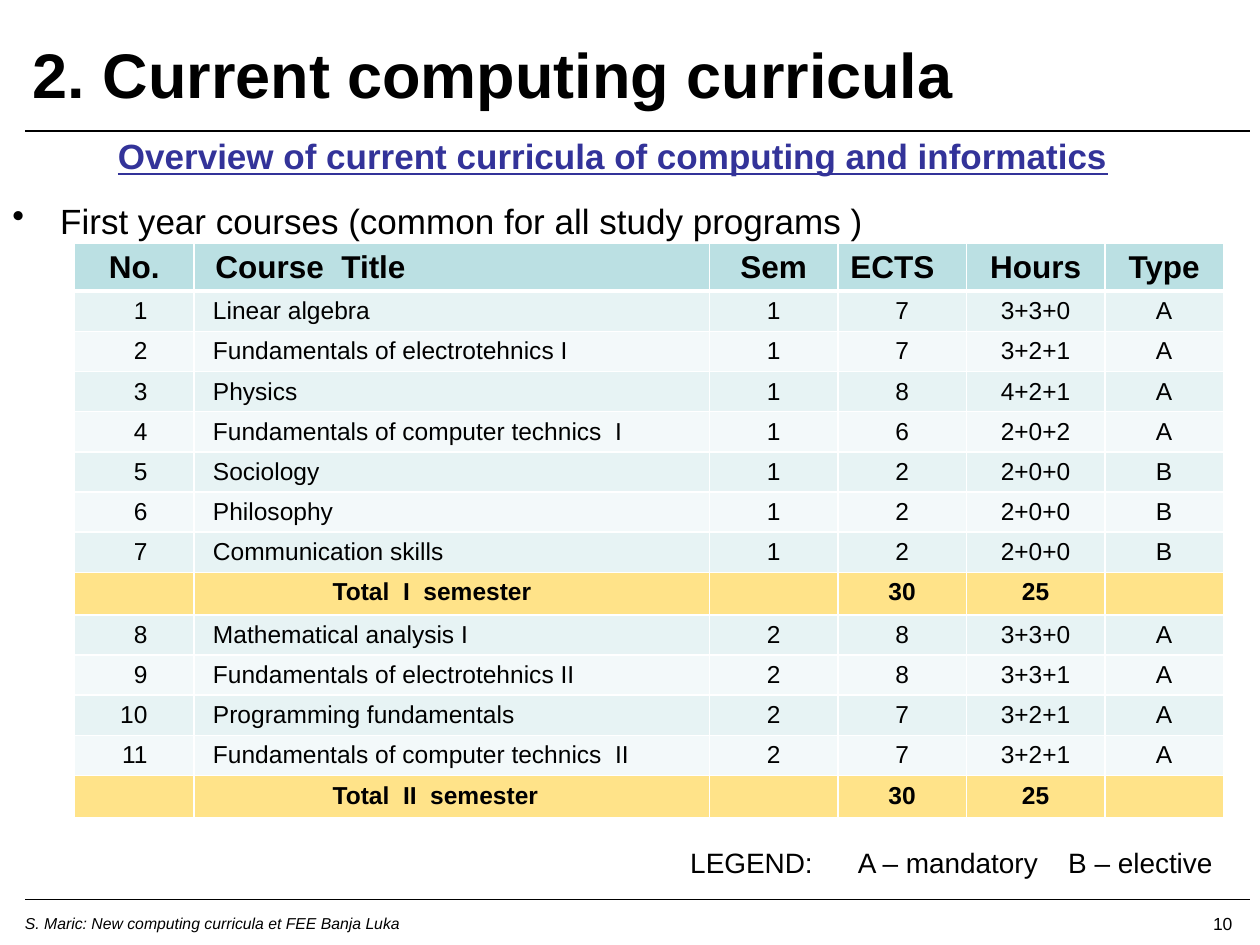
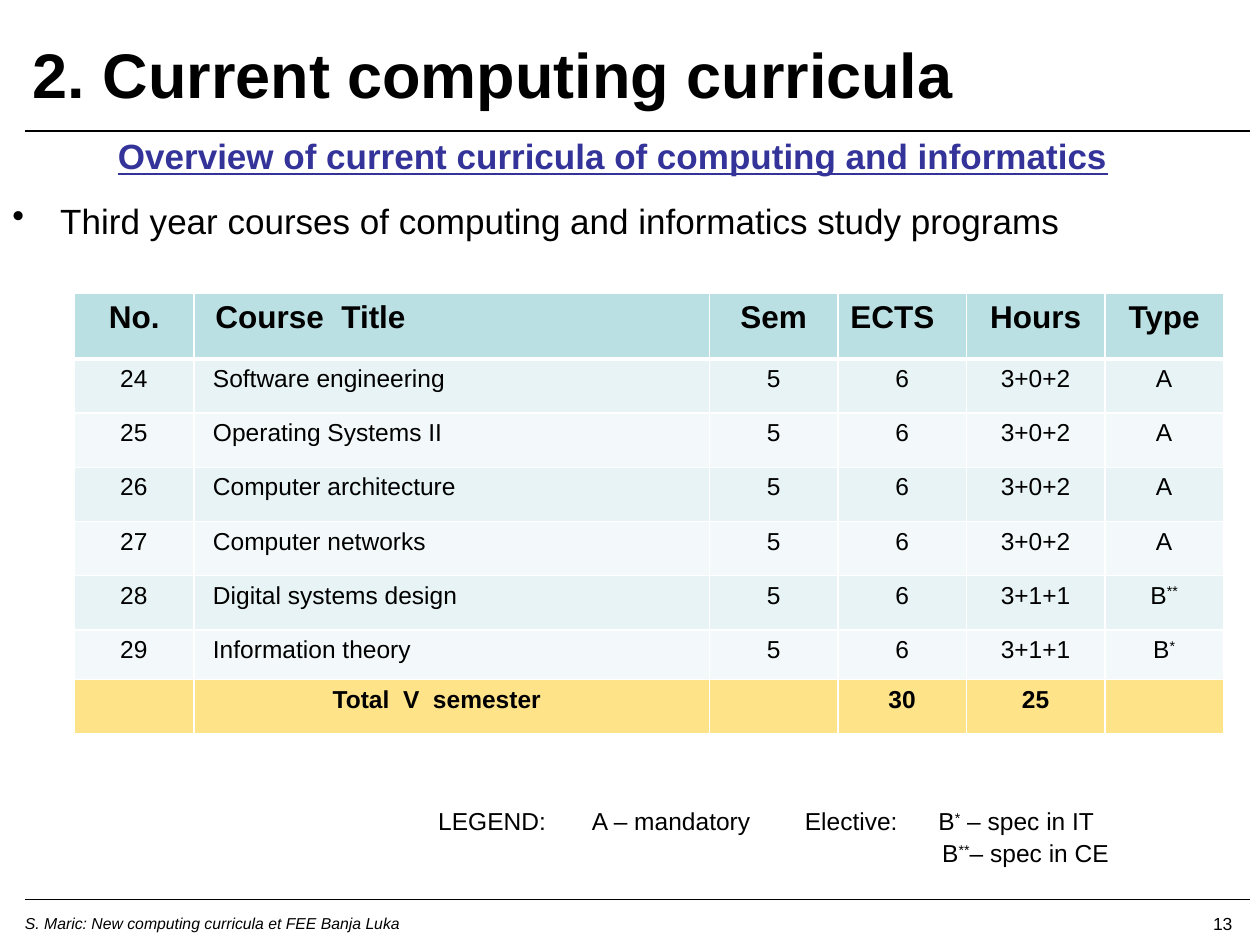
from dataclasses import dataclass
from itertools import groupby
from typing import NamedTuple

from pptx import Presentation
from pptx.dml.color import RGBColor
from pptx.enum.shapes import MSO_CONNECTOR
from pptx.enum.text import MSO_ANCHOR, MSO_AUTO_SIZE, PP_ALIGN
from pptx.oxml.xmlchemy import OxmlElement
from pptx.util import Inches, Pt

LEFT, CENTER, RIGHT = PP_ALIGN.LEFT, PP_ALIGN.CENTER, PP_ALIGN.RIGHT
TOP, BOTTOM = MSO_ANCHOR.TOP, MSO_ANCHOR.BOTTOM
STRAIGHT = MSO_CONNECTOR.STRAIGHT
NO_RESIZE = MSO_AUTO_SIZE.NONE
TITLE_ONLY = 5

# The page is a grid of 100 columns by 75 rows
PAGE_WIDTH, PAGE_HEIGHT = Inches(10), Inches(7.5)


def columns(count: float) -> int:
    return round(PAGE_WIDTH * count / 100)


def rows(count: float) -> int:
    return round(PAGE_HEIGHT * count / 75)


@dataclass(frozen=True)
class Theme:
    font: str = "Arial"
    ink: str = "000000"
    accent: str = "333399"
    border: str = "FFFFFF"
    header_fill: str = "BBE0E3"
    band_fills: tuple = ("E7F3F4", "F3F9FA")
    total_fill: str = "FFE389"
    title_size: float = 36
    body_size: float = 20
    header_size: float = 18
    cell_size: float = 14
    number_size: float = 10
    footer_size: float = 9


class Place(NamedTuple):
    left: float
    top: float
    width: float
    height: float

    def lengths(self) -> tuple:
        return (columns(self.left), rows(self.top),
                columns(self.width), rows(self.height))


class Column(NamedTuple):
    heading: str
    width: float
    heading_align: PP_ALIGN = CENTER
    align: PP_ALIGN = CENTER


class Legend(NamedTuple):
    place: Place
    size: float
    tabs: tuple
    lines: tuple


class CoursePage(NamedTuple):
    number: str
    topic: str
    table_top: float
    row_heights: tuple
    courses: tuple
    legend: Legend


THEME = Theme()
TITLE = "2. Current computing curricula"
SUBTITLE = "Overview of current curricula of computing and informatics"
FOOTER = "S. Maric: New computing curricula et FEE Banja Luka"

TITLE_PLACE = Place(1.6, 1.3, 78.4, 8)
BODY_PLACE = Place(0, 10.2, 97.3, 9)
FOOTER_PLACE = Place(1, 72, 71.7, 2.5)
NUMBER_PLACE = Place(81.5, 72, 17.3, 2.4)
RULE_LEFT, RULE_RIGHT, RULE_TOPS = 2, 99.2, (10.4, 71.4)

TABLE_LEFT = 5.9
TABLE_COLUMNS = (
    Column("No.", 9.5, align=RIGHT),
    Column("Course  Title", 40.9, LEFT, LEFT),
    Column("Sem", 10.2),
    Column("ECTS", 10.2, LEFT),
    Column("Hours", 11),
    Column("Type", 9.4),
)
NUMBER_MARGIN, COURSE_MARGIN, HEADING_MARGIN, TOTAL_MARGIN = 3.7, 1.5, 1.7, 11

PAGES = (
    CoursePage(
        "10", "First year courses (common for all study programs )",
        19.3, (3.7,) + (3.19,) * 13,
        (
            ("1", "Linear algebra", "1", "7", "3+3+0", "A"),
            ("2", "Fundamentals of electrotehnics I", "1", "7", "3+2+1", "A"),
            ("3", "Physics", "1", "8", "4+2+1", "A"),
            ("4", "Fundamentals of computer technics  I", "1", "6", "2+0+2", "A"),
            ("5", "Sociology", "1", "2", "2+0+0", "B"),
            ("6", "Philosophy", "1", "2", "2+0+0", "B"),
            ("7", "Communication skills", "1", "2", "2+0+0", "B"),
            ("", "Total  I  semester", "", "30", "25", ""),
            ("8", "Mathematical analysis I", "2", "8", "3+3+0", "A"),
            ("9", "Fundamentals of electrotehnics II", "2", "8", "3+3+1", "A"),
            ("10", "Programming fundamentals", "2", "7", "3+2+1", "A"),
            ("11", "Fundamentals of computer technics  II", "2", "7", "3+2+1", "A"),
            ("", "Total  II  semester", "", "30", "25", ""),
        ),
        Legend(Place(53.8, 66.6, 45, 3.6), 16, (13.3, 30),
               ("LEGEND:\tA – mandatory\tB – elective",)),
    ),
    CoursePage(
        "13", "Third year courses of computing and informatics study programs",
        23.3, (5.2,) + (4.3,) * 5 + (3.95, 4.3),
        (
            ("24", "Software engineering", "5", "6", "3+0+2", "A"),
            ("25", "Operating Systems II", "5", "6", "3+0+2", "A"),
            ("26", "Computer architecture", "5", "6", "3+0+2", "A"),
            ("27", "Computer networks", "5", "6", "3+0+2", "A"),
            ("28", "Digital systems design", "5", "6", "3+1+1", "B**"),
            ("29", "Information theory", "5", "6", "3+1+1", "B*"),
            ("", "Total  V  semester", "", "30", "25", ""),
        ),
        Legend(Place(33.8, 63.5, 62, 5.8), 14, (12.2, 29.1, 39.7, 40),
               ("LEGEND:\tA – mandatory\tElective:\tB* – spec in IT",
                "\t\t\t\tB**– spec in CE")),
    ),
)


# Text
def write(para, text: str, size: float, color: str = THEME.ink, **extra) -> None:
    """Fill a paragraph, raising every group of asterisks."""
    for raised, letters in groupby(text, lambda letter: letter == "*"):
        span = para.add_run()
        span.text = "".join(letters)
        font_values = {"name": THEME.font, "size": Pt(size), "bold": False, **extra}
        for name, value in font_values.items():
            setattr(span.font, name, value)
        span.font.color.rgb = RGBColor.from_string(color)
        if raised:
            span.font._element.set("baseline", "30000")
    if not text:
        end = OxmlElement("a:endParaRPr")
        end.set("sz", str(size * 100))
        para._p.append(end)


def set_frame(frame, anchor: MSO_ANCHOR = TOP) -> None:
    frame_values = {"word_wrap": True, "auto_size": NO_RESIZE, "vertical_anchor": anchor}
    for name, value in frame_values.items():
        setattr(frame, name, value)


def add_text_box(page, place: Place):
    frame = page.shapes.add_textbox(*place.lengths()).text_frame
    set_frame(frame)
    return frame


def add_bullet(para, indent: float) -> None:
    properties = para._p.get_or_add_pPr()
    properties.set("marL", str(columns(indent)))
    properties.set("indent", str(-columns(indent)))
    bullet = OxmlElement("a:buChar")
    bullet.set("char", "•")
    properties.append(bullet)


def add_tabs(para, stops: tuple) -> None:
    tab_list = OxmlElement("a:tabLst")
    for stop in stops:
        tab = OxmlElement("a:tab")
        tab.set("pos", str(columns(stop)))
        tab.set("algn", "l")
        tab_list.append(tab)
    para._p.get_or_add_pPr().append(tab_list)


# Parts shared by the pages
def add_rule(page, top: float) -> None:
    rule = page.shapes.add_connector(
        STRAIGHT, columns(RULE_LEFT), rows(top), columns(RULE_RIGHT), rows(top))
    rule.line.width = Pt(0.75)
    rule.line.color.rgb = RGBColor.from_string(THEME.ink)
    rule._element.spPr.append(OxmlElement("a:effectLst"))


def add_frame_parts(page, number: str) -> None:
    for top in RULE_TOPS:
        add_rule(page, top)
    title = page.shapes.title
    title.left, title.top, title.width, title.height = TITLE_PLACE.lengths()
    set_frame(title.text_frame, BOTTOM)
    title_para = title.text_frame.paragraphs[0]
    title_para.alignment = LEFT
    write(title_para, TITLE, THEME.title_size, bold=True)
    footer = add_text_box(page, FOOTER_PLACE).paragraphs[0]
    write(footer, FOOTER, THEME.footer_size, italic=True)
    number_para = add_text_box(page, NUMBER_PLACE).paragraphs[0]
    number_para.alignment = RIGHT
    write(number_para, number, THEME.number_size)


def add_body(page, topic: str) -> None:
    frame = add_text_box(page, BODY_PLACE)
    subtitle = frame.paragraphs[0]
    subtitle.alignment = CENTER
    subtitle.space_after = Pt(13)
    write(subtitle, SUBTITLE, THEME.body_size, THEME.accent, bold=True, underline=True)
    topic_para = frame.add_paragraph()
    add_bullet(topic_para, 3.8)
    write(topic_para, topic, THEME.body_size)


# Course table
def set_borders(cell, bottom_width: float) -> None:
    properties = cell._tc.get_or_add_tcPr()
    widths = {"a:lnL": 1, "a:lnR": 1, "a:lnT": 1, "a:lnB": bottom_width}
    for position, (tag, width) in enumerate(widths.items()):
        line = OxmlElement(tag)
        line.set("w", str(Pt(width)))
        fill = OxmlElement("a:solidFill")
        color = OxmlElement("a:srgbClr")
        color.set("val", THEME.border)
        fill.append(color)
        line.append(fill)
        properties.insert(position, line)


def fill_cell(cell, text: str, fill: str, align: PP_ALIGN, size: float,
              bold: bool, bottom_width: float) -> None:
    cell.fill.solid()
    cell.fill.fore_color.rgb = RGBColor.from_string(fill)
    set_borders(cell, bottom_width)
    para = cell.text_frame.paragraphs[0]
    para.alignment = align
    write(para, text, size, bold=bold)


def add_course_table(page, content: CoursePage) -> None:
    place = Place(TABLE_LEFT, content.table_top,
                  sum(column.width for column in TABLE_COLUMNS), sum(content.row_heights))
    table = page.shapes.add_table(
        len(content.row_heights), len(TABLE_COLUMNS), *place.lengths()).table
    for row, height in zip(table.rows, content.row_heights):
        row.height = rows(height)
    for index, column in enumerate(TABLE_COLUMNS):
        table.columns[index].width = columns(column.width)
        fill_cell(table.cell(0, index), column.heading, THEME.header_fill,
                  column.heading_align, THEME.header_size, True, 3)
    table.cell(0, 1).margin_left = columns(HEADING_MARGIN)

    for row_index, course in enumerate(content.courses, start=1):
        is_total = not course[0]
        fill = THEME.total_fill if is_total else THEME.band_fills[(row_index - 1) % 2]
        for index, (column, text) in enumerate(zip(TABLE_COLUMNS, course)):
            fill_cell(table.cell(row_index, index), text, fill, column.align,
                      THEME.cell_size, is_total, 1)
        table.cell(row_index, 0).margin_right = columns(NUMBER_MARGIN)
        table.cell(row_index, 1).margin_left = columns(
            TOTAL_MARGIN if is_total else COURSE_MARGIN)


def add_legend(page, legend: Legend) -> None:
    frame = add_text_box(page, legend.place)
    for index, line in enumerate(legend.lines):
        para = frame.add_paragraph() if index else frame.paragraphs[0]
        if index:
            para.space_before = Pt(1.5)
        add_tabs(para, legend.tabs)
        write(para, line, legend.size)


def main() -> None:
    deck = Presentation()
    deck.slide_width, deck.slide_height = PAGE_WIDTH, PAGE_HEIGHT
    for content in PAGES:
        page = deck.slides.add_slide(deck.slide_layouts[TITLE_ONLY])
        add_frame_parts(page, content.number)
        add_body(page, content.topic)
        add_course_table(page, content)
        add_legend(page, content.legend)
    deck.save("out.pptx")


if __name__ == "__main__":
    main()
